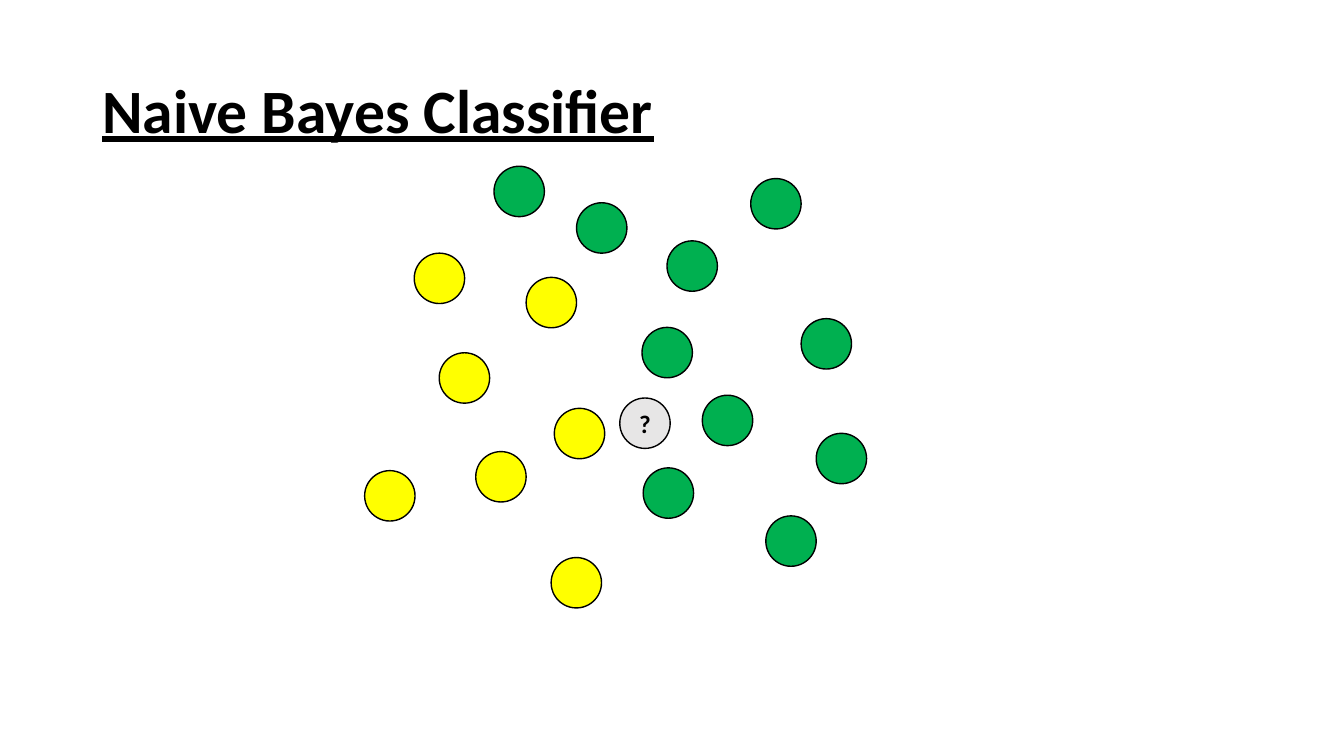
from dataclasses import dataclass

from pptx import Presentation
from pptx.dml.color import RGBColor
from pptx.enum.shapes import MSO_SHAPE as Shape
from pptx.enum.text import MSO_ANCHOR as Anchor, PP_ALIGN as Align
from pptx.slide import Slide
from pptx.text.text import TextFrame
from pptx.util import Cm, Pt

COLORS = {
    "green": "00B050",
    "yellow": "FFFF00",
    "unknown": "E7E6E6",
    "black": "000000",
}
FONT = "Calibri"
DIAMETER = 1.27


@dataclass(frozen=True)
class Sample:
    left: float
    top: float
    label: str = ""


SAMPLES = {
    "green": [
        Sample(12.45, 4.19),
        Sample(14.53, 5.11),
        Sample(16.18, 8.25),
        Sample(17.7, 9.96),
        Sample(18.92, 4.5),
        Sample(16.81, 6.07),
        Sample(20.19, 8.03),
        Sample(20.57, 10.92),
        Sample(19.3, 13),
        Sample(16.21, 11.79),
    ],
    "yellow": [
        Sample(13.26, 6.99),
        Sample(10.44, 6.38),
        Sample(11.07, 8.89),
        Sample(9.19, 11.86),
        Sample(11.99, 11.38),
        Sample(13.89, 14.05),
        Sample(13.97, 10.29),
    ],
    "unknown": [Sample(15.62, 10.03, "?")],
}


def rgb(name: str) -> RGBColor:
    return RGBColor.from_string(COLORS[name])


def add_text(tf: TextFrame, text: str, size: float, align: Align,
             spacing: float = 1.0, underline: bool = False) -> None:
    tf.word_wrap = True
    tf.vertical_anchor = Anchor.MIDDLE
    p = tf.paragraphs[0]
    p.alignment = align
    p.line_spacing = spacing
    r = p.add_run()
    r.text = text
    r.font.name = FONT
    r.font.size = Pt(size)
    r.font.bold = True
    r.font.underline = underline
    r.font.color.rgb = rgb("black")


def add_title(s: Slide, text: str) -> None:
    sp = s.shapes.add_textbox(Cm(2.33), Cm(1.01), Cm(29.21), Cm(3.68))
    add_text(sp.text_frame, text, 44, Align.LEFT, 0.9, True)


def add_sample(s: Slide, sample: Sample, color: str) -> None:
    sp = s.shapes.add_shape(Shape.OVAL, Cm(sample.left), Cm(sample.top),
                            Cm(DIAMETER), Cm(DIAMETER))
    sp.shadow.inherit = False
    sp.fill.solid()
    sp.fill.fore_color.rgb = rgb(color)
    sp.line.color.rgb = rgb("black")
    sp.line.width = Pt(1)
    if sample.label:
        add_text(sp.text_frame, sample.label, 18, Align.CENTER)


def main() -> None:
    prs = Presentation()
    prs.slide_width = Cm(33.87)
    prs.slide_height = Cm(19.05)
    s = prs.slides.add_slide(prs.slide_layouts[6])
    add_title(s, "Naive Bayes Classifier")
    for color, samples in SAMPLES.items():
        for sample in samples:
            add_sample(s, sample, color)
    prs.save("out.pptx")


if __name__ == "__main__":
    main()
